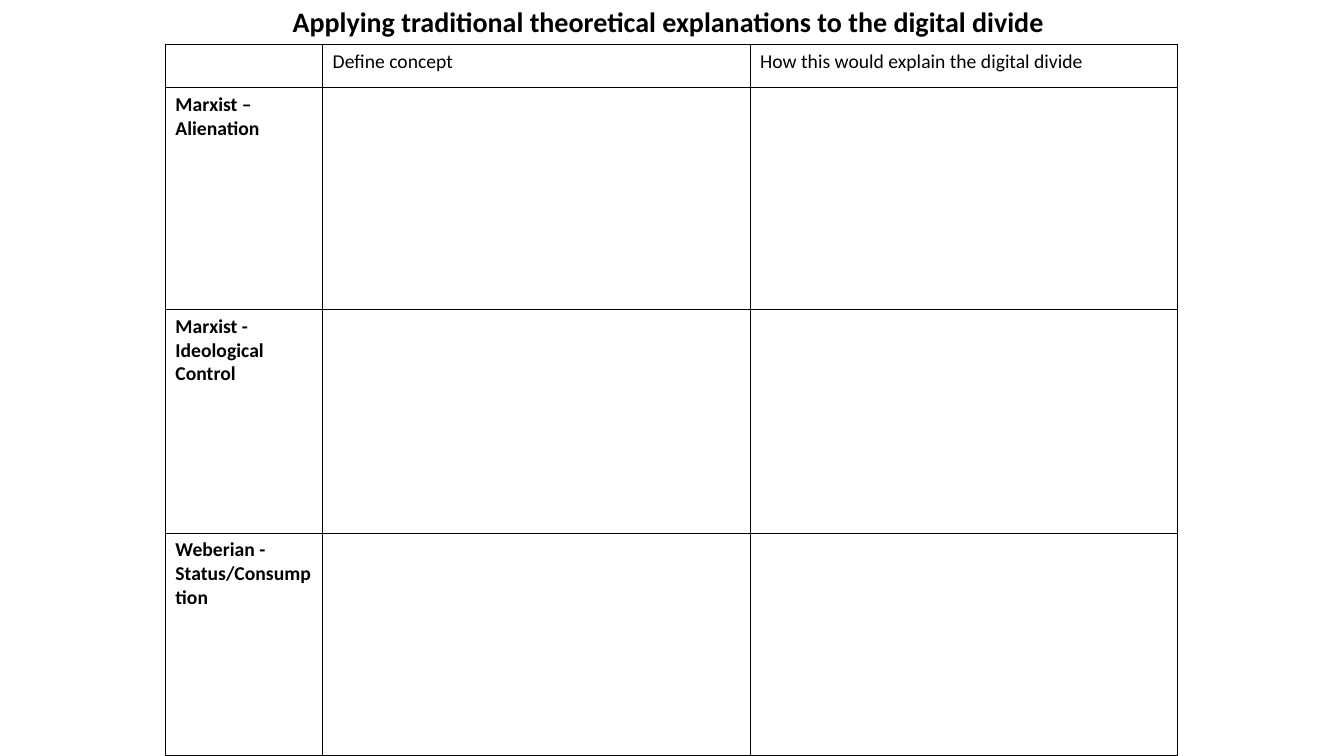
from lxml import etree
from pptx import Presentation
from pptx.dml.color import RGBColor
from pptx.enum.text import MSO_AUTO_SIZE, PP_ALIGN
from pptx.oxml.ns import qn
from pptx.util import Pt

CENTER = PP_ALIGN.CENTER
LEFT = PP_ALIGN.LEFT
GROW = MSO_AUTO_SIZE.SHAPE_TO_FIT_TEXT
EMU_PER_PX = 9144
EMU_PER_POINT = 12700
BLANK_LAYOUT = 6

TITLE = "Applying traditional theoretical explanations to the digital divide "
COLUMN_WIDTHS = [156, 424, 424]
ROW_HEIGHTS = [43, 220, 222, 221]
ROWS = [
    ["", "Define concept", "How this would explain the digital divide"],
    ["Marxist – Alienation", "", ""],
    ["Marxist - Ideological Control", "", ""],
    ["Weberian - Status/Consumption", "", ""],
]


def px(length):
    return length * EMU_PER_PX


def color(value):
    return RGBColor.from_string(value)


class WorksheetSlide:
    font = "Calibri"
    ink = "000000"
    paper = "FFFFFF"
    border_points = 1

    def __init__(self, deck):
        self.page = deck.slides.add_slide(deck.slide_layouts[BLANK_LAYOUT])
        fill = self.page.background.fill
        fill.solid()
        fill.fore_color.rgb = color(self.paper)

    def add_text(self, frame, text, size, bold=False, align=LEFT):
        para = frame.paragraphs[0]
        para.alignment = align
        span = para.add_run()
        span.text = text
        span.font.color.rgb = color(self.ink)
        formats = {"name": self.font, "size": Pt(size), "bold": bold}
        for name, value in formats.items():
            setattr(span.font, name, value)

    def title(self, text, left, top, width, height):
        box = self.page.shapes.add_textbox(*map(px, (left, top, width, height)))
        frame = box.text_frame
        frame.word_wrap = True
        frame.auto_size = GROW
        self.add_text(frame, text, 20, bold=True, align=CENTER)

    def border(self, cell):
        properties = cell._tc.get_or_add_tcPr()
        for side in ("a:lnL", "a:lnR", "a:lnT", "a:lnB"):
            line = etree.SubElement(properties, qn(side))
            line.set("w", str(self.border_points * EMU_PER_POINT))
            fill = etree.SubElement(line, qn("a:solidFill"))
            etree.SubElement(fill, qn("a:srgbClr")).set("val", self.ink)

    def table(self, rows, left, top, widths, heights):
        area = (left, top, sum(widths), sum(heights))
        frame = self.page.shapes.add_table(len(rows), len(widths), *map(px, area))
        grid = frame.table
        for flag in ("first_row", "horz_banding"):
            setattr(grid, flag, False)
        for column, width in zip(grid.columns, widths):
            column.width = px(width)
        for row, height in zip(grid.rows, heights):
            row.height = px(height)
        for row_index, texts in enumerate(rows):
            for column_index, text in enumerate(texts):
                cell = grid.cell(row_index, column_index)
                self.border(cell)
                cell.fill.background()
                if text:
                    self.add_text(cell.text_frame, text, 14, bold=column_index == 0)


def main():
    deck = Presentation()
    deck.slide_width = px(1333)
    deck.slide_height = px(750)
    worksheet = WorksheetSlide(deck)
    worksheet.title(TITLE, 164, 0, 1004, 44)
    worksheet.table(ROWS, 164, 44, COLUMN_WIDTHS, ROW_HEIGHTS)
    deck.save("out.pptx")


if __name__ == "__main__":
    main()
